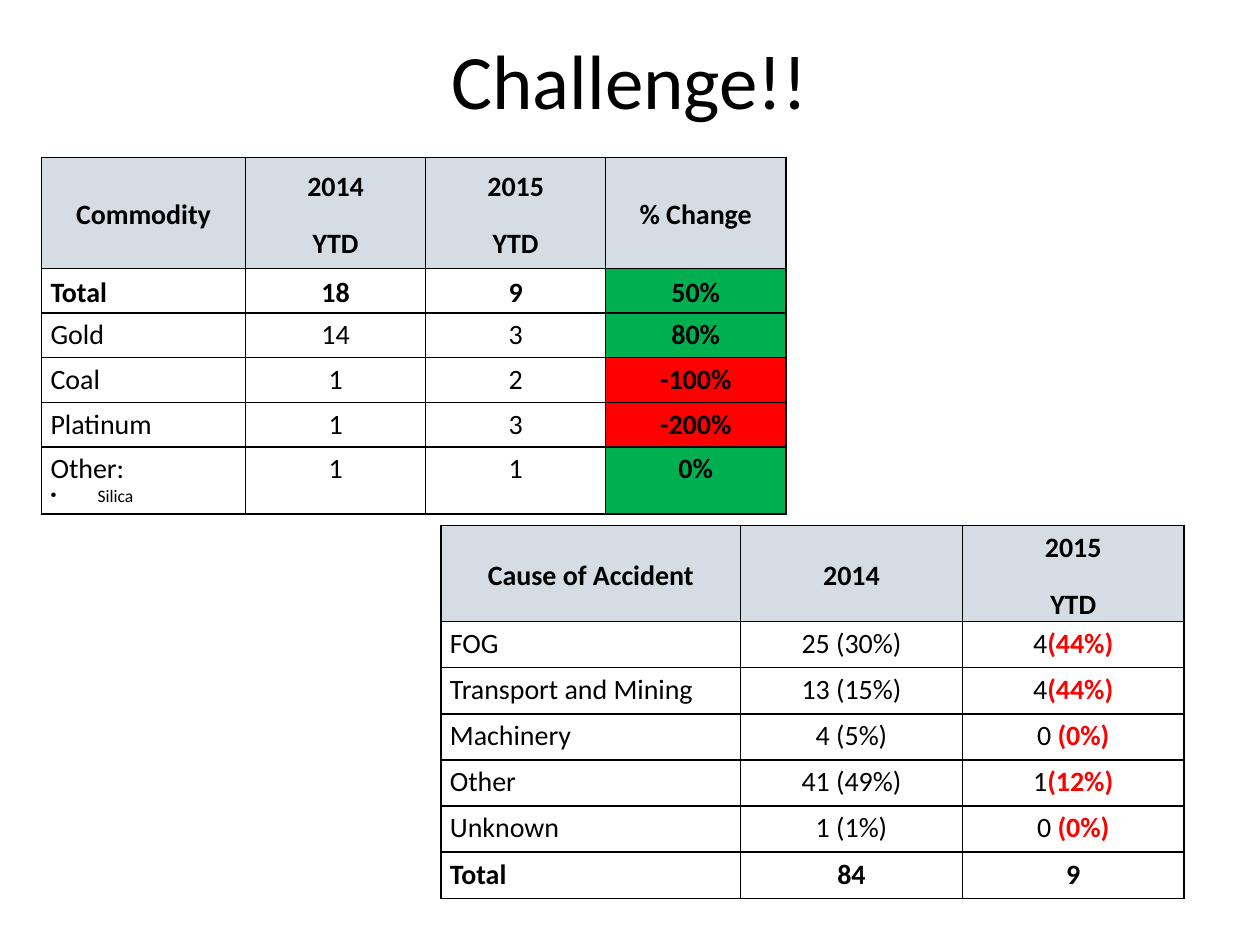
from pptx import Presentation
from pptx.dml.color import RGBColor
from pptx.enum import text
from pptx.oxml import parse_xml
from pptx.oxml.ns import nsdecls
from pptx.util import Cm, Pt

FONT = "Calibri"
BLACK, RED, GREEN, HEADER = "000000", "FF0000", "00B050", "D5DCE4"
BULLET = "• "

# Content: a newline starts a paragraph, a pair is plain text plus red text
TITLE = "Challenge!!"
COMMODITIES = [
    ["Commodity", "2014\nYTD", "2015\nYTD", "% Change"],
    ["Total", "18", "9", "50%"],
    ["Gold", "14", "3", "80%"],
    ["Coal", "1", "2", "-100%"],
    ["Platinum", "1", "3", "-200%"],
    ["Other:\n" + BULLET + "Silica", "1", "1", "0%"],
]
CAUSES = [
    ["Cause of Accident", "2014", "2015\nYTD"],
    ["FOG", "25 (30%)", ("4", "(44%)")],
    ["Transport and Mining", "13 (15%)", ("4", "(44%)")],
    ["Machinery", "4 (5%)", ("0 ", "(0%)")],
    ["Other", "41 (49%)", ("1", "(12%)")],
    ["Unknown", "1 (1%)", ("0 ", "(0%)")],
    ["Total", "84", "9"],
]
TABLES = [
    dict(rows=COMMODITIES, at=(0.84, 3.17), widths=[4.11] + [3.63] * 3,
         heights=[2.24] + [0.9] * 4 + [1.35], change_col=3, middle_rows=(0, 1)),
    dict(rows=CAUSES, at=(8.89, 10.59), widths=[6.04] + [4.47] * 2,
         heights=[1.93] + [0.93] * 6, change_col=None, middle_rows=(0,)),
]


def rgb(color):
    return RGBColor.from_string(color)


def add_run(p, words, size=16, bold=False, color=BLACK):
    r = p.add_run()
    r.text = words
    r.font.name, r.font.size, r.font.bold = FONT, Pt(size), bold
    r.font.color.rgb = rgb(color)


def add_borders(cell):
    tc_pr = cell._tc.get_or_add_tcPr()
    for side in "LRTB":
        tc_pr.append(parse_xml(
            f'<a:ln{side} {nsdecls("a")} w="12700"><a:solidFill>'
            f'<a:srgbClr val="{BLACK}"/></a:solidFill></a:ln{side}>'))


def add_bullet(p):
    p_pr = p._p.get_or_add_pPr()
    p_pr.set("marL", str(Cm(0.95)))
    p_pr.set("indent", str(-Cm(0.95)))
    p_pr.append(parse_xml(f'<a:buChar {nsdecls("a")} char="•"/>'))


def write_cell(cell, value, centred, bold, header):
    plain, red = value if isinstance(value, tuple) else (value, "")
    tf = cell.text_frame
    for i, line in enumerate(plain.split("\n")):
        p = tf.add_paragraph() if i else tf.paragraphs[0]
        if line.startswith(BULLET):
            add_bullet(p)
            add_run(p, line.removeprefix(BULLET), size=10)
            continue
        p.alignment = text.PP_ALIGN.CENTER if centred else text.PP_ALIGN.LEFT
        p.line_spacing = 1.15
        p.space_after = Pt(10 if header else 0)
        add_run(p, line, bold=bold)
    if red:
        add_run(p, red, bold=True, color=RED)


def add_table(s, rows, at, widths, heights, change_col, middle_rows):
    table = s.shapes.add_table(len(rows), len(widths), Cm(at[0]), Cm(at[1]),
                               Cm(sum(widths)), Cm(sum(heights))).table
    table.first_row = table.horz_banding = False
    for column, width in zip(table.columns, widths):
        column.width = Cm(width)
    for i, (values, height) in enumerate(zip(rows, heights)):
        table.rows[i].height = Cm(height)
        header = i == 0
        for j, value in enumerate(values):
            cell = table.cell(i, j)
            change = j == change_col
            cell.margin_left = cell.margin_right = Cm(0.18)
            cell.margin_top = cell.margin_bottom = 0
            cell.vertical_anchor = (text.MSO_ANCHOR.MIDDLE if i in middle_rows
                                    else text.MSO_ANCHOR.TOP)
            add_borders(cell)
            if header or change:
                cell.fill.solid()
                cell.fill.fore_color.rgb = rgb(
                    HEADER if header else RED if value.startswith("-") else GREEN)
            else:
                cell.fill.background()
            bold = header or change or values[0] == "Total"
            write_cell(cell, value, header or j > 0, bold, header)


# Slide
prs = Presentation()
prs.slide_width, prs.slide_height = Cm(25.4), Cm(19.05)
s = prs.slides.add_slide(prs.slide_layouts[5])

# Title
title = s.shapes.title
title.left, title.top, title.width, title.height = Cm(1.27), 0, Cm(22.86), Cm(3.17)
tf = title.text_frame
tf.vertical_anchor = text.MSO_ANCHOR.MIDDLE
p = tf.paragraphs[0]
p.alignment = text.PP_ALIGN.CENTER
add_run(p, TITLE, size=44)

# Tables
for table_data in TABLES:
    add_table(s, **table_data)

prs.save("out.pptx")
